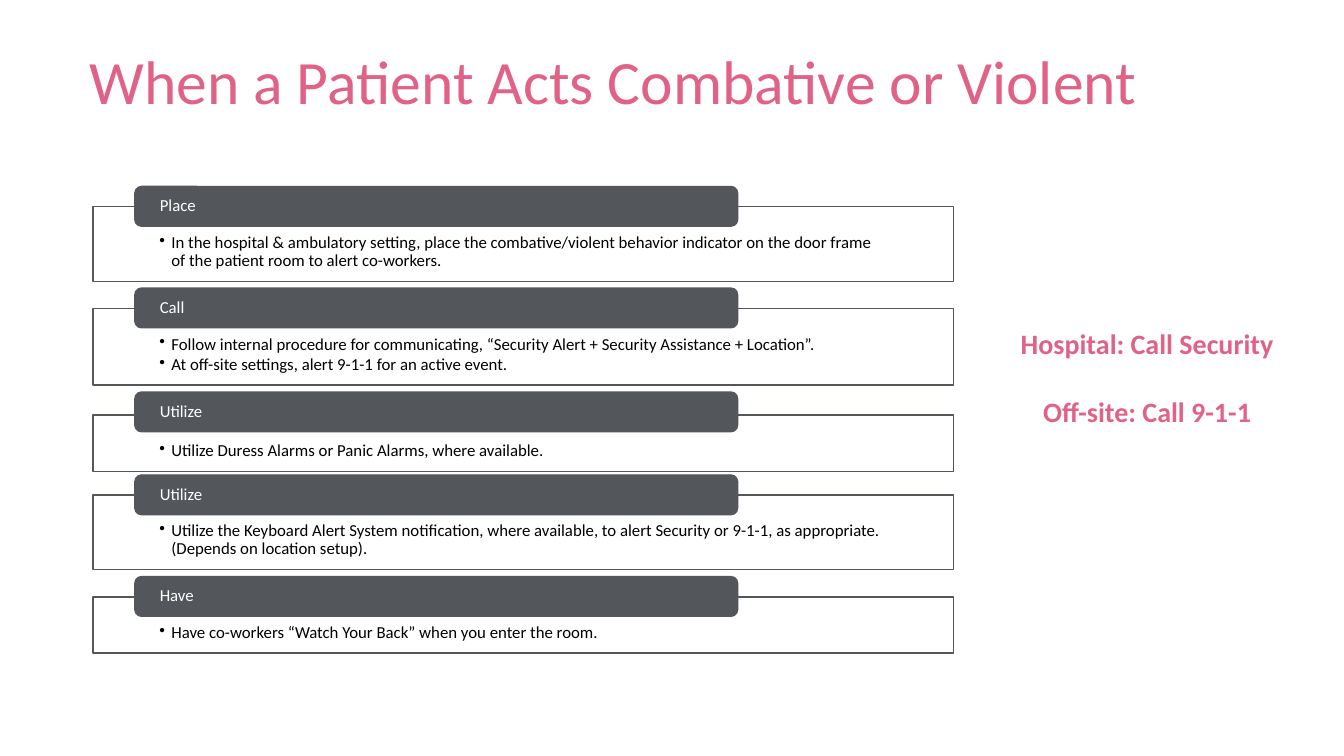
from lxml import etree
from pptx import Presentation
from pptx import util as u
from pptx.dml.color import RGBColor
from pptx.enum import shapes, text
from pptx.oxml.ns import qn

# Content
TITLE = "When a Patient Acts Combative or Violent"
STEPS = [  # heading, points, heading top, frame top, frame height (cm)
    ("Place", ["In the hospital & ambulatory setting, place the combative/violent behavior "
               "indicator on the door frame of the patient room to alert co-workers."],
     4.7, 5.21, 1.88),
    ("Call", ["Follow internal procedure for communicating, “Security Alert + Security "
              "Assistance + Location”.",
              "At off-site settings, alert 9-1-1 for an active event."],
     7.26, 7.77, 1.93),
    ("Utilize", ["Utilize Duress Alarms or Panic Alarms, where available."],
     9.88, 10.46, 1.42),
    ("Utilize", ["Utilize the Keyboard Alert System notification, where available, to alert "
                 "Security or 9-1-1, as appropriate. (Depends on location setup)."],
     11.97, 12.47, 1.88),
    ("Have", ["Have co-workers “Watch Your Back” when you enter the room."],
     14.53, 15.04, 1.42),
]
CONTACTS = ["Hospital: Call Security", "Off-site: Call 9-1-1"]

COLORS = {"pink": "E06287", "slate": "53565A", "white": "FFFFFF", "black": "000000"}
FRAME_LEFT, FRAME_WIDTH = 2.34, 21.69
HEADING_LEFT, HEADING_WIDTH, HEADING_HEIGHT = 3.4, 15.19, 1.0
BULLET_INDENT = 0.3


def color(name):
    return RGBColor.from_string(COLORS[name])


def apply(target, formats):
    for name, value in formats.items():
        setattr(target, name, value)


def write(box, lines, ink, size, margins, anchor, layout, bold=False, bullet=False):
    """Fill a box with one paragraph per line."""
    frame = box.text_frame
    sides = ("margin_left", "margin_top", "margin_right", "margin_bottom")
    apply(frame, {"word_wrap": True, "vertical_anchor": anchor,
                  **{side: u.Cm(value) for side, value in zip(sides, margins)}})
    for index, line in enumerate(lines):
        para = frame.add_paragraph() if index else frame.paragraphs[0]
        if bullet:
            props = para._p.get_or_add_pPr()
            props.set("marL", str(u.Cm(BULLET_INDENT)))
            props.set("indent", str(-u.Cm(BULLET_INDENT)))
            etree.SubElement(props, qn("a:buChar")).set("char", "•")
        apply(para, layout)
        span = para.add_run()
        span.text = line
        apply(span.font, {"name": "Calibri", "size": u.Pt(size), "bold": bold})
        span.font.color.rgb = color(ink)


def add_panel(page, kind, place, fill):
    panel = page.shapes.add_shape(kind, *map(u.Cm, place))
    panel.shadow.inherit = False
    panel.fill.solid()
    panel.fill.fore_color.rgb = color(fill)
    panel.line.color.rgb = color("slate")
    panel.line.width = u.Pt(1)
    return panel


deck = Presentation()
apply(deck, {"slide_width": u.Cm(33.87), "slide_height": u.Cm(19.05)})
page = deck.slides.add_slide(deck.slide_layouts[6])
left, center = text.PP_ALIGN.LEFT, text.PP_ALIGN.CENTER
top, middle = text.MSO_ANCHOR.TOP, text.MSO_ANCHOR.MIDDLE
margins = (0.25, 0.13, 0.25, 0.13)

# Title
box = page.shapes.add_textbox(u.Cm(2.01), u.Cm(0.58), u.Cm(30.81), u.Cm(3.12))
write(box, [TITLE], "pink", 44, margins, middle, {"line_spacing": 0.9})

# Steps: outlined frame with a heading tab over its top edge
for heading, points, heading_top, frame_top, height in STEPS:
    panel = add_panel(page, shapes.MSO_SHAPE.RECTANGLE,
                      (FRAME_LEFT, frame_top, FRAME_WIDTH, height), "white")
    write(panel, points, "black", 12, (1.68, 0.69, 1.68, 0.23), top,
          {"alignment": left, "line_spacing": 0.9, "space_after": u.Pt(1.8)}, bullet=True)
    tab = add_panel(page, shapes.MSO_SHAPE.ROUNDED_RECTANGLE,
                    (HEADING_LEFT, heading_top, HEADING_WIDTH, HEADING_HEIGHT), "slate")
    write(tab, [heading], "white", 12, (0.58, 0, 0.58, 0), middle,
          {"alignment": left, "line_spacing": 0.9})

# Who to call
box = page.shapes.add_textbox(u.Cm(24.21), u.Cm(8.1), u.Cm(9.4), u.Cm(2.82))
write(box, CONTACTS, "pink", 20, margins, top, {"alignment": center}, bold=True)
box.text_frame.paragraphs[1].space_before = u.Pt(24.4)

deck.save("out.pptx")
